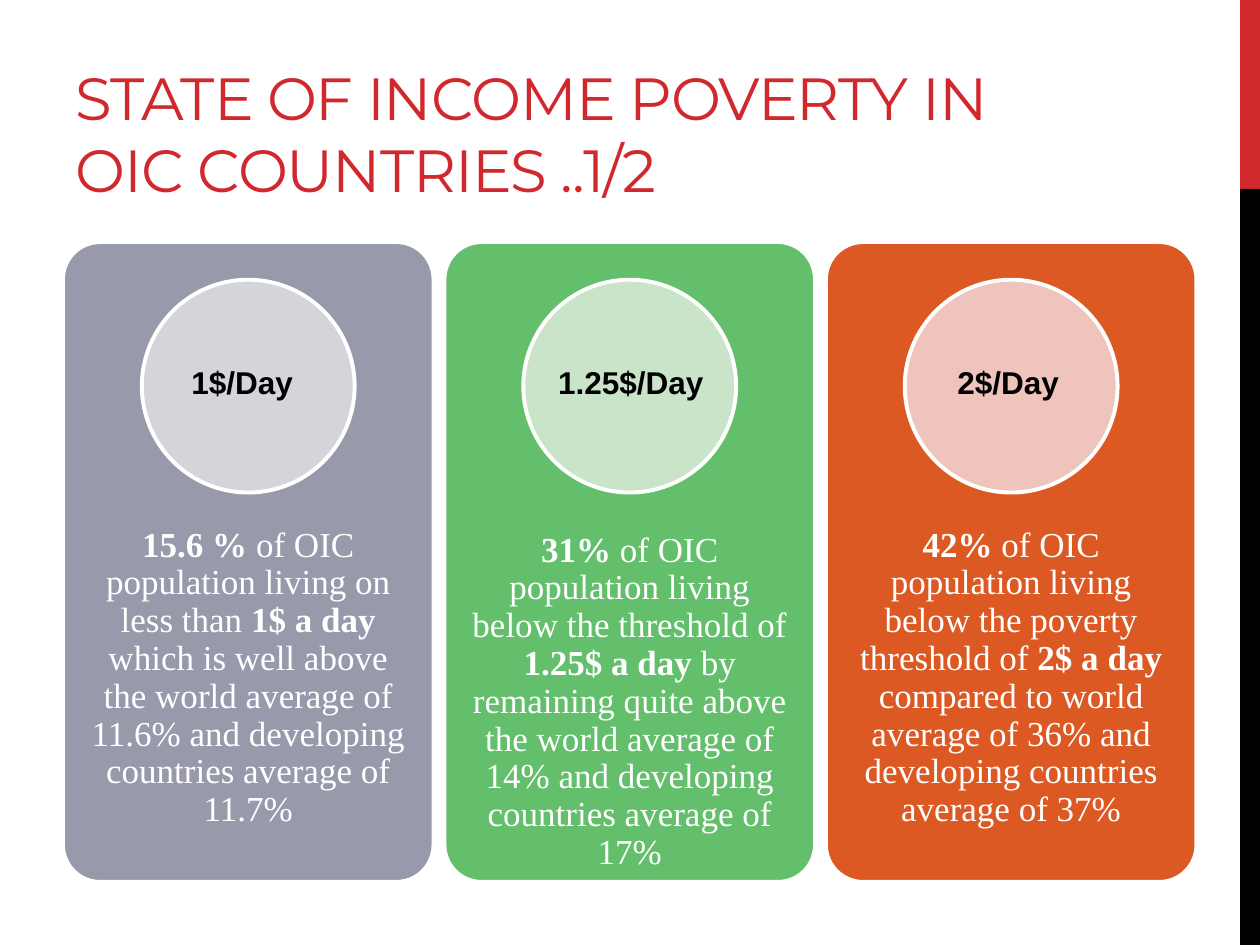
from dataclasses import dataclass

from pptx import Presentation
from pptx import util as u
from pptx.dml.color import RGBColor
from pptx.enum import shapes, text


@dataclass(frozen=True)
class Theme:
    red: str = "D1282E"
    black: str = "000000"
    white: str = "FFFFFF"
    title_font: str = "Montserrat"
    label_font: str = "Arial"
    body_font: str = "Times New Roman"
    title_size: int = 34
    label_size: int = 18
    body_size: int = 20


class SlideBuilder:
    """Holds the theme and the current slide."""

    def __init__(self, slide, theme):
        self.slide = slide
        self.theme = theme

    def add_span(self, para, words, font, size, color, bold=False):
        span = para.add_run()
        span.text = words
        span.font.name = font
        span.font.size = u.Pt(size)
        span.font.bold = bold
        span.font.color.rgb = RGBColor.from_string(color)
        return span

    def title(self, words, left, top, width, height):
        box = self.slide.shapes.title
        box.left, box.top = u.Cm(left), u.Cm(top)
        box.width, box.height = u.Cm(width), u.Cm(height)
        frame = box.text_frame
        frame.auto_size = text.MSO_AUTO_SIZE.NONE
        frame.vertical_anchor = text.MSO_ANCHOR.BOTTOM
        para = frame.paragraphs[0]
        para.alignment = text.PP_ALIGN.LEFT
        span = self.add_span(para, words, self.theme.title_font,
                             self.theme.title_size, self.theme.red)
        span.font._element.set("spc", "-60")

    def shape(self, kind, left, top, width, height, fill, outlined=False):
        shape = self.slide.shapes.add_shape(
            kind, u.Cm(left), u.Cm(top), u.Cm(width), u.Cm(height))
        shape.shadow.inherit = False
        shape.fill.solid()
        shape.fill.fore_color.rgb = RGBColor.from_string(fill)
        if outlined:
            shape.line.color.rgb = RGBColor.from_string(self.theme.white)
            shape.line.width = u.Pt(2.25)
        else:
            shape.line.fill.background()
        return shape

    def text_box(self, left, top, width, height):
        box = self.slide.shapes.add_textbox(
            u.Cm(left), u.Cm(top), u.Cm(width), u.Cm(height))
        box.text_frame.word_wrap = True
        return box.text_frame

    def label(self, words, left, top, width):
        frame = self.text_box(left, top, width, 1.02)
        self.add_span(frame.paragraphs[0], words, self.theme.label_font,
                      self.theme.label_size, self.theme.black, bold=True)

    def body(self, spans, left, middle, width, height):
        frame = self.text_box(left, middle - height / 2, width, height)
        frame.vertical_anchor = text.MSO_ANCHOR.MIDDLE
        frame.margin_left = frame.margin_right = u.Cm(0.4)
        frame.margin_top = frame.margin_bottom = 0
        para = frame.paragraphs[0]
        para.alignment = text.PP_ALIGN.CENTER
        para.line_spacing = 0.9
        # Bold and regular spans alternate, starting with bold
        for index, words in enumerate(spans):
            self.add_span(para, words, self.theme.body_font,
                          self.theme.body_size, self.theme.white,
                          bold=index % 2 == 0)


# Card colour, circle colour, label, label left, label width, text middle, text
CARDS = [
    ("989AAC", "D4D4DB", "1$/Day", 3.61, 2.74, 13.67,
     ["15.6 %", " of OIC population living on less than ", "1$ a day",
      " which is well above the world average of 11.6% and developing "
      "countries average of 11.7%"]),
    ("63BF6C", "C9E4C9", "1.25$/Day", 11, 3.81, 14.15,
     ["31% ", "of OIC population living below the threshold of ",
      "1.25$ a day",
      " by remaining quite above the world average of 14% and developing "
      "countries average of 17%"]),
    ("DC5924", "EEC4BD", "2$/Day", 19.05, 2.74, 13.67,
     ["42%", " of OIC population living below the poverty threshold of ",
      "2$ a day",
      " compared to world average of 36% and developing countries average "
      "of 37%"]),
]
CARD_LEFT, CARD_TOP, CARD_WIDTH, CARD_HEIGHT = 1.27, 4.88, 7.47, 12.9
CARD_STEP = 7.69
CIRCLE_TOP, CIRCLE_SIZE = 5.64, 4.29


def main():
    deck = Presentation()
    deck.slide_width, deck.slide_height = u.Cm(25.4), u.Cm(19.05)
    theme = Theme()
    page = SlideBuilder(deck.slides.add_slide(deck.slide_layouts[5]), theme)
    kinds = shapes.MSO_SHAPE

    # Side band
    page.shape(kinds.RECTANGLE, 25, 0, 0.4, 3.81, theme.red)
    page.shape(kinds.RECTANGLE, 25, 3.81, 0.4, 15.24, theme.black)

    # Title
    page.title("STATE OF INCOME POVERTY IN OIC COUNTRIES ..1/2",
               1.27, 0.43, 21.16, 3.81)

    # Cards, one for each poverty line
    for index, (fill, tint, label, label_left, label_width, middle,
                spans) in enumerate(CARDS):
        left = CARD_LEFT + index * CARD_STEP
        card = page.shape(kinds.ROUNDED_RECTANGLE, left, CARD_TOP,
                          CARD_WIDTH, CARD_HEIGHT, fill, outlined=True)
        card.adjustments[0] = 0.1
        page.shape(kinds.OVAL, left + (CARD_WIDTH - CIRCLE_SIZE) / 2,
                   CIRCLE_TOP, CIRCLE_SIZE, CIRCLE_SIZE, tint, outlined=True)
        page.body(spans, left, middle, CARD_WIDTH, 7.2)
        page.label(label, label_left, 7.19, label_width)

    deck.save("out.pptx")


if __name__ == "__main__":
    main()
